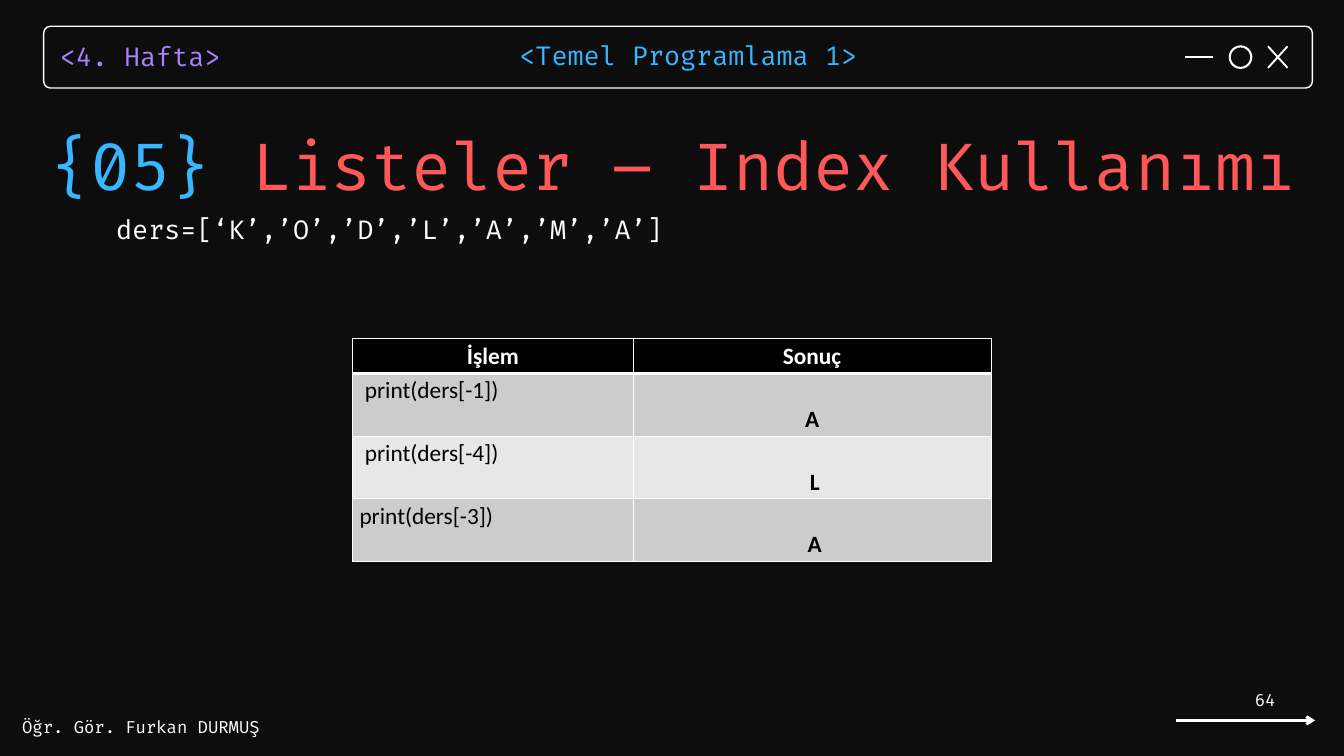
from lxml import etree
from pptx import Presentation
from pptx.dml.color import RGBColor
from pptx.enum.shapes import MSO_CONNECTOR, MSO_SHAPE
from pptx.enum.text import MSO_ANCHOR, MSO_AUTO_SIZE, PP_ALIGN
from pptx.oxml.ns import qn
from pptx.util import Inches, Pt

STRAIGHT = MSO_CONNECTOR.STRAIGHT
OVAL, ROUNDED = MSO_SHAPE.OVAL, MSO_SHAPE.ROUNDED_RECTANGLE
MIDDLE, FIT_TEXT = MSO_ANCHOR.MIDDLE, MSO_AUTO_SIZE.SHAPE_TO_FIT_TEXT
LEFT, CENTER, RIGHT = PP_ALIGN.LEFT, PP_ALIGN.CENTER, PP_ALIGN.RIGHT

BACKGROUND = RGBColor(0x0D, 0x0D, 0x0D)
WHITE = RGBColor(0xFF, 0xFF, 0xFF)
BLACK = RGBColor(0, 0, 0)
BLUE = RGBColor(0x38, 0xB6, 0xFF)
PURPLE = RGBColor(0xAB, 0x81, 0xFF)
RED = RGBColor(0xFF, 0x58, 0x58)
DARK_BAND = RGBColor(0xCC, 0xCC, 0xCC)
LIGHT_BAND = RGBColor(0xE7, 0xE7, 0xE7)

CODE_FONT, TABLE_FONT = "Fira Code", "Calibri"
SPACE_INDENT = 0.08

RESULTS = [
    # operation, its indent, result, its indent
    ("print(ders[-1])", SPACE_INDENT, "A", 0),
    ("print(ders[-4])", SPACE_INDENT, "L", SPACE_INDENT),
    ("print(ders[-3])", 0, "A", SPACE_INDENT),
]


def add_run(paragraph, text, size, color, font=CODE_FONT, bold=None):
    run = paragraph.add_run()
    run.text = text
    run.font.name = font
    run.font.size = Pt(size)
    run.font.color.rgb = color
    run.font.bold = bold


def add_text(slide, box, runs, size, line_points=None):
    """Add a one-paragraph box without insets; runs are (text, color) pairs."""
    shape = slide.shapes.add_textbox(*map(Inches, box))
    frame = shape.text_frame
    frame.word_wrap = True
    frame.auto_size = FIT_TEXT
    frame.margin_left = frame.margin_top = frame.margin_right = frame.margin_bottom = 0
    paragraph = frame.paragraphs[0]
    if line_points:
        paragraph.line_spacing = Pt(line_points)
    for text, color in runs:
        add_run(paragraph, text, size, color)
    return shape


def add_outline(slide, preset, box, width):
    shape = slide.shapes.add_shape(preset, *map(Inches, box))
    shape.shadow.inherit = False
    shape.fill.background()
    shape.line.color.rgb = WHITE
    shape.line.width = Pt(width)
    return shape


def add_line(slide, start, end, width):
    line = slide.shapes.add_connector(STRAIGHT, *map(Inches, (*start, *end)))
    line.line.color.rgb = WHITE
    line.line.width = Pt(width)
    etree.SubElement(line._element.spPr, qn("a:effectLst"))
    return line


def add_window_buttons(slide, left, top, size):
    """Draw minimise, maximise and close icons of one height."""
    middle, bottom = top + size / 2, top + size
    close_left, close_right = left + 1.23, left + 1.52
    add_line(slide, (left, middle), (left + 0.41, middle), 2)
    add_outline(slide, OVAL, (left + 0.66, top, size, size), 2.25)
    add_line(slide, (close_left, top), (close_right, bottom), 2)
    add_line(slide, (close_right, top), (close_left, bottom), 2)


def add_window_bar(slide, left, top, width, height):
    bar = add_outline(slide, ROUNDED, (left, top, width, height), 1.5)
    bar.adjustments[0] = 0.11
    add_text(slide, (left + 0.24, top + 0.13, 3.4, 0.53),
             [("<4. Hafta>", PURPLE)], 28, 39.2)
    add_text(slide, (left + 7.08, top + 0.12, 5.29, 0.53),
             [("<Temel Programlama 1>", BLUE)], 28, 39.2)
    add_window_buttons(slide, left + 16.99, top + 0.3, 0.32)


def add_footer(slide, left, top, right):
    add_text(slide, (left, top, 3.67, 0.3), [("Öğr. Gör. Furkan DURMUŞ", WHITE)], 18)
    arrow = add_line(slide, (right - 2.07, top + 0.05), (right, top + 0.05), 3)
    etree.SubElement(arrow.line._get_or_add_ln(), qn("a:tailEnd"), type="arrow")

    number = slide.shapes.add_textbox(
        *map(Inches, (right - 2.82, top - 0.46, 2.33, 0.4)))
    number.text_frame.word_wrap = True
    number.text_frame.vertical_anchor = MIDDLE
    paragraph = number.text_frame.paragraphs[0]
    paragraph.alignment = RIGHT
    add_run(paragraph, "64", 18, WHITE)


def set_borders(cell, bottom_width):
    """Put white borders before the fill of the cell, as the schema asks."""
    properties = cell._tc.get_or_add_tcPr()
    widths = {"a:lnL": 1, "a:lnR": 1, "a:lnT": 1, "a:lnB": bottom_width}
    for position, (tag, width) in enumerate(widths.items()):
        border = etree.Element(qn(tag), w=str(Pt(width)))
        fill = etree.SubElement(border, qn("a:solidFill"))
        etree.SubElement(fill, qn("a:srgbClr"), val=str(WHITE))
        properties.insert(position, border)


def fill_cell(cell, text, fill, color=BLACK, bold=False, alignment=LEFT,
              indent=0, spacing=None, bottom_width=1):
    cell.fill.solid()
    cell.fill.fore_color.rgb = fill
    set_borders(cell, bottom_width)
    cell.margin_left = Inches(0.1 + indent)
    paragraph = cell.text_frame.paragraphs[0]
    paragraph.alignment = alignment
    paragraph.line_spacing = spacing
    add_run(paragraph, text, 25, color, TABLE_FONT, bold)


def add_result_table(slide, left, top, width, height):
    table = slide.shapes.add_table(
        len(RESULTS) + 1, 2, *map(Inches, (left, top, width, height))).table
    table.columns[0].width = Inches(4.17)
    table.columns[1].width = Inches(width - 4.17)
    for row in table.rows:
        row.height = Inches(0.41)

    for column, heading in enumerate(("İşlem", "Sonuç")):
        fill_cell(table.cell(0, column), heading, BLACK, WHITE, True, CENTER,
                  bottom_width=3)
    for row, (operation, indent, result, result_indent) in enumerate(RESULTS, 1):
        band = DARK_BAND if row % 2 else LIGHT_BAND
        top_width = 3 if row == 1 else 1
        fill_cell(table.cell(row, 0), operation, band, indent=indent)
        fill_cell(table.cell(row, 1), result, band, bold=True, alignment=CENTER,
                  indent=result_indent, spacing=2.0)
        if top_width == 3:
            for cell in table.rows[row].cells:
                cell._tc.tcPr.find(qn("a:lnT")).set("w", str(Pt(top_width)))


def main():
    presentation = Presentation()
    presentation.slide_width = Inches(20)
    presentation.slide_height = Inches(11.25)
    slide = presentation.slides.add_slide(presentation.slide_layouts[6])
    slide.background.fill.solid()
    slide.background.fill.fore_color.rgb = BACKGROUND

    add_window_bar(slide, 0.65, 0.39, 18.88, 0.92)
    add_footer(slide, 0.33, 10.67, 19.57)
    add_result_table(slide, 5.25, 5.04, 9.5, 1.64)
    add_text(slide, (1.73, 3.17, 17.14, 0.47),
             [("ders=[‘K’,’O’,’D’,’L’,’A’,’M’,’A’]", WHITE)], 28)
    add_text(slide, (0.75, 1.61, 19.25, 1.37),
             [("{05}", BLUE), (" Listeler – Index Kullanımı", RED)], 70, 102.6)
    presentation.save("out.pptx")


if __name__ == "__main__":
    main()
